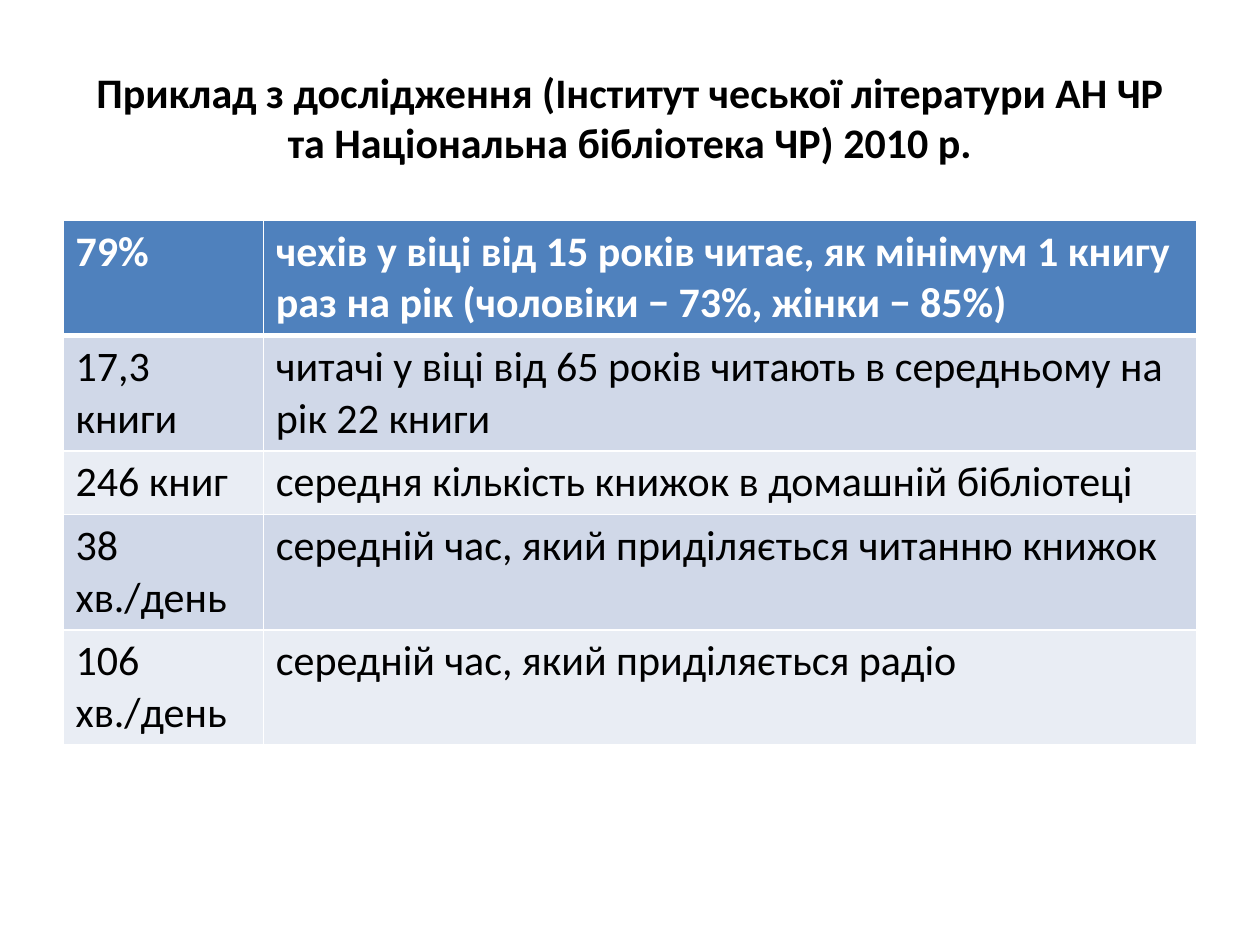
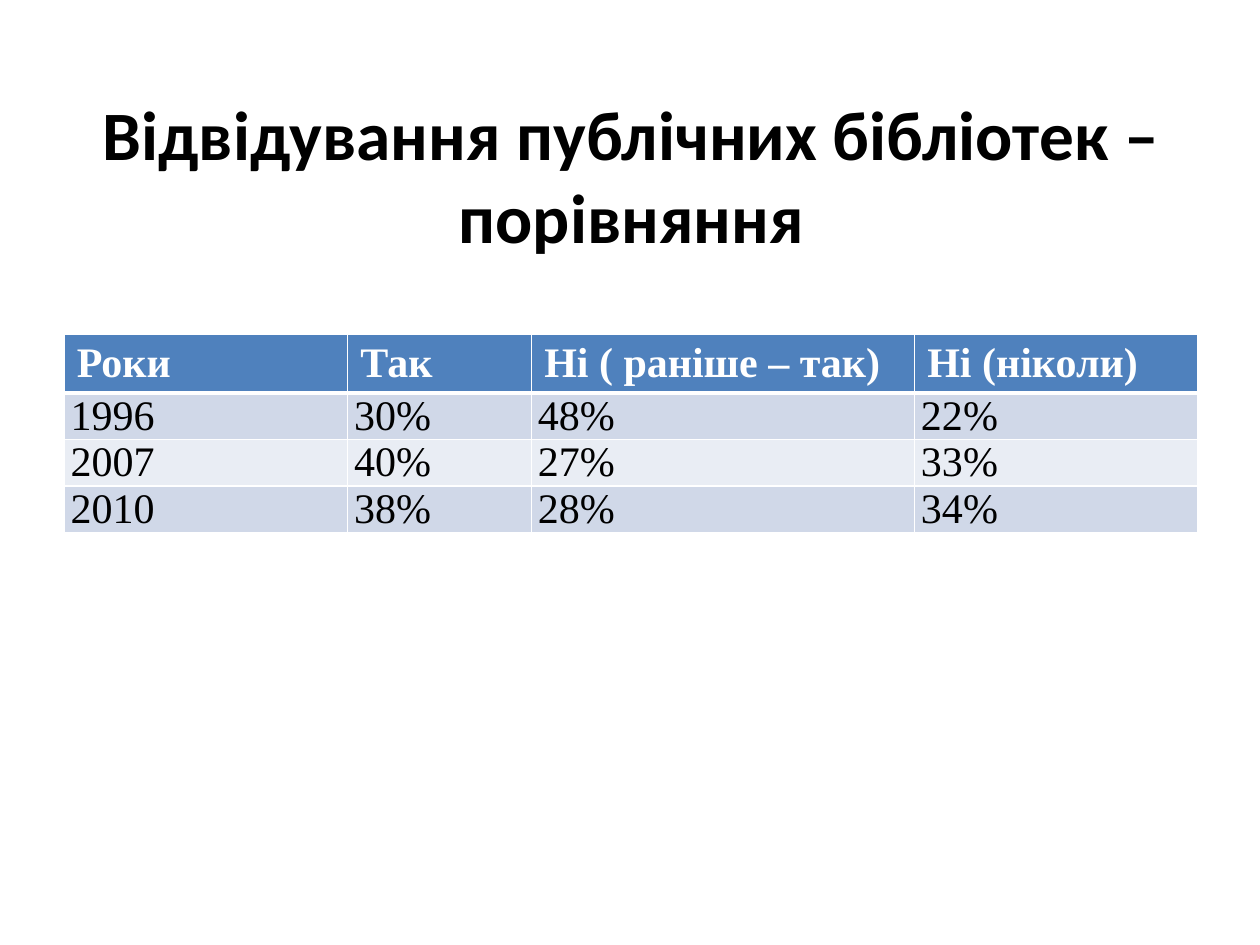
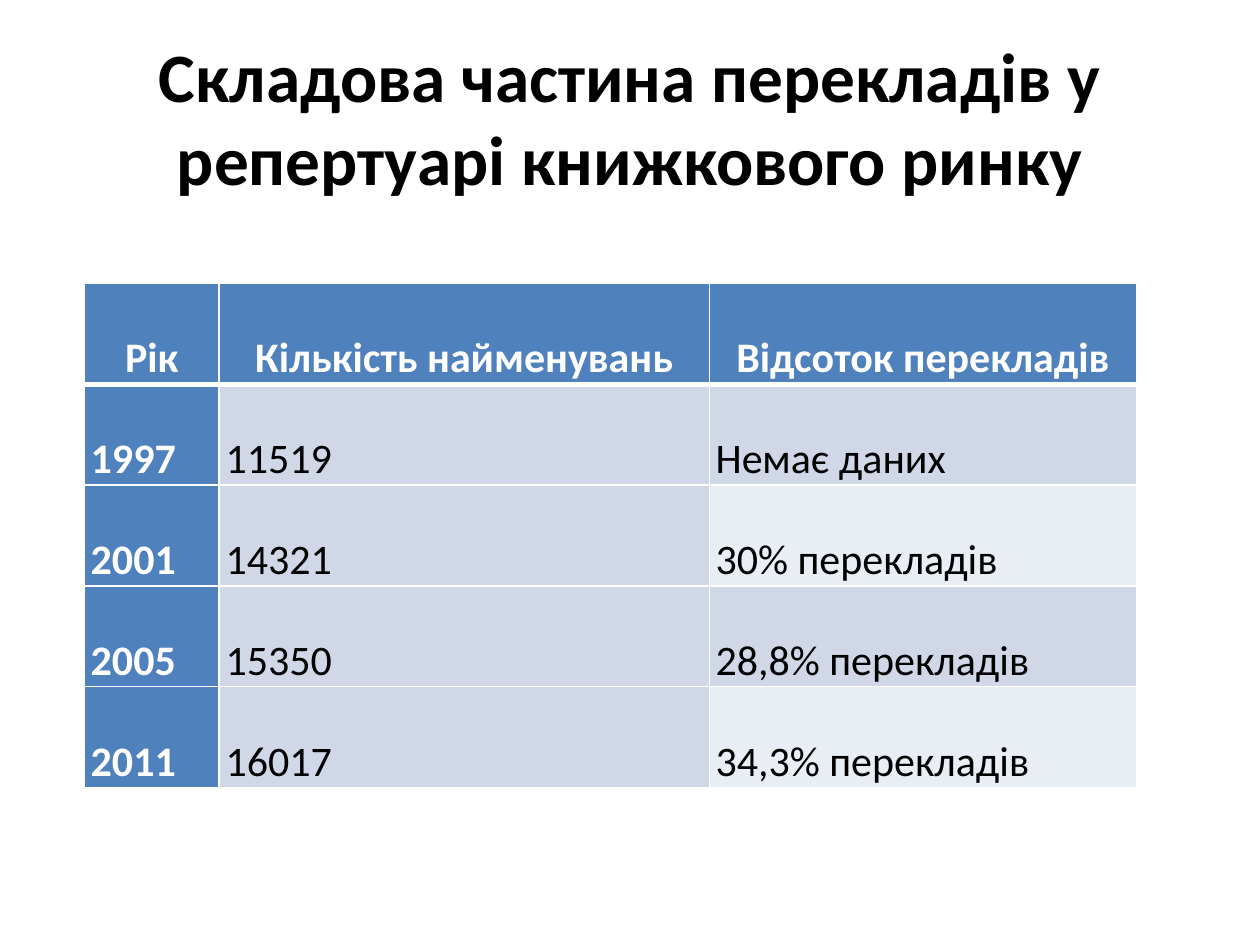
from dataclasses import dataclass

import pptx
import pptx.dml.color
import pptx.enum.text
import pptx.oxml
import pptx.oxml.ns
import pptx.util
from pptx.util import Inches

COLORS = {
    "text": "000000",
    "white": "FFFFFF",
    "header": "4F81BD",
    "band_dark": "D0D8E8",
    "band_light": "E9EDF4",
}
TITLE_FONT = "Calibri"
TABLE_SIZE = 24
TITLE_ONLY_LAYOUT = 5
GRID_WIDTH, HEADER_RULE_WIDTH = 1, 3
CENTER = pptx.enum.text.PP_ALIGN.CENTER
LEFT = pptx.enum.text.PP_ALIGN.LEFT
TOP = pptx.enum.text.MSO_ANCHOR.TOP
BOTTOM = pptx.enum.text.MSO_ANCHOR.BOTTOM


@dataclass
class TableSlide:
    title: str
    title_size: float
    title_position: tuple[float, float]
    table_position: tuple[float, float]
    column_widths: list[float]
    header_height: float
    row_height: float
    rows: list[list[str]]
    font: str = "Calibri"
    tight_header: bool = False
    tight_body: bool = True
    year_column: bool = False


SLIDES = [
    TableSlide(
        title="Приклад з дослідження (Інститут чеської літератури АН ЧР "
        "та Національна бібліотека ЧР) 2010 р.",
        title_size=24,
        title_position=(0.5, 0.3),
        table_position=(0.5, 1.75),
        column_widths=[1.59, 7.41],
        header_height=0.41,
        row_height=0.41,
        rows=[
            ["79%", "чехів у віці від 15 років читає, як мінімум 1 книгу "
             "раз на рік (чоловіки − 73%, жінки − 85%)"],
            ["17,3 книги", "читачі у віці від 65 років читають в середньому на рік 22 книги"],
            ["246 книг", "середня кількість книжок в домашній бібліотеці"],
            ["38 хв./день", "середній час, який приділяється читанню книжок"],
            ["106 хв./день", "середній час, який приділяється радіо"],
        ],
        tight_body=False,
    ),
    TableSlide(
        title="Відвідування публічних бібліотек – порівняння",
        title_size=39.6,
        title_position=(0.51, 0.76),
        table_position=(0.51, 2.65),
        column_widths=[2.25, 1.46, 3.04, 2.25],
        header_height=0.4,
        row_height=0.32,
        rows=[
            ["Роки", "Так", "Ні ( раніше – так)", "Ні (ніколи)"],
            ["1996", "30%", "48%", "22%"],
            ["2007", "40%", "27%", "33%"],
            ["2010", "38%", "28%", "34%"],
        ],
        font="Times New Roman",
    ),
    TableSlide(
        title="Складова частина перекладів у репертуарі книжкового ринку",
        title_size=39.6,
        title_position=(0.5, 0.3),
        table_position=(0.67, 2.25),
        column_widths=[1.07, 3.89, 3.39],
        header_height=0.8,
        row_height=0.8,
        rows=[
            ["Рік", "Кількість найменувань", "Відсоток перекладів"],
            ["1997", "11519", "Немає даних"],
            ["2001", "14321", "30% перекладів"],
            ["2005", "15350", "28,8% перекладів"],
            ["2011", "16017", "34,3% перекладів"],
        ],
        tight_header=True,
        year_column=True,
    ),
]


def rgb(name: str) -> pptx.dml.color.RGBColor:
    return pptx.dml.color.RGBColor.from_string(COLORS[name])


def add_run(paragraph, text: str, font: str, size: float, color: str, bold: bool) -> None:
    run = paragraph.add_run()
    run.text = text
    run.font.name = font
    run.font.size = pptx.util.Pt(size)
    run.font.bold = bold
    run.font.color.rgb = rgb(color)


def add_title(slide, content: TableSlide) -> None:
    title = slide.shapes.title
    title.left, title.top = map(Inches, content.title_position)
    title.width, title.height = Inches(9), Inches(1.25)
    frame = title.text_frame
    frame.word_wrap = True
    frame.auto_size = pptx.enum.text.MSO_AUTO_SIZE.NONE
    frame.vertical_anchor = pptx.enum.text.MSO_ANCHOR.MIDDLE
    paragraph = frame.paragraphs[0]
    paragraph.alignment = CENTER
    add_run(paragraph, content.title, TITLE_FONT, content.title_size, "text", True)


def set_borders(cell, row: int) -> None:
    """Draw the white grid, with a thicker rule under the header row."""
    widths = {
        "lnL": GRID_WIDTH,
        "lnR": GRID_WIDTH,
        "lnT": HEADER_RULE_WIDTH if row == 1 else GRID_WIDTH,
        "lnB": HEADER_RULE_WIDTH if row == 0 else GRID_WIDTH,
    }
    properties = cell._tc.get_or_add_tcPr()
    for tag, width in widths.items():
        properties.append(pptx.oxml.parse_xml(
            f'<a:{tag} {pptx.oxml.ns.nsdecls("a")} w="{pptx.util.Pt(width)}">'
            f'<a:solidFill><a:srgbClr val="{COLORS["white"]}"/></a:solidFill></a:{tag}>'
        ))


def cell_fill(content: TableSlide, row: int, column: int) -> str:
    if row == 0 or (content.year_column and column == 0):
        return "header"
    if row % 2 or (content.year_column and column == 1):
        return "band_dark"
    return "band_light"


def format_cell(cell, content: TableSlide, row: int, column: int) -> None:
    tight = content.tight_body if row else content.tight_header
    cell.vertical_anchor = BOTTOM if tight else TOP
    cell.margin_left = cell.margin_right = Inches(0.05 if tight else 0.1)
    cell.margin_top = cell.margin_bottom = Inches(0 if tight else 0.05)
    set_borders(cell, row)
    fill = cell_fill(content, row, column)
    cell.fill.solid()
    cell.fill.fore_color.rgb = rgb(fill)
    strong = fill == "header"
    paragraph = cell.text_frame.paragraphs[0]
    paragraph.alignment = CENTER if row == 0 and tight else LEFT
    add_run(paragraph, content.rows[row][column], content.font, TABLE_SIZE,
            "white" if strong else "text", strong)


def add_data_table(slide, content: TableSlide) -> None:
    row_heights = [content.header_height] + [content.row_height] * (len(content.rows) - 1)
    left, top = content.table_position
    table = slide.shapes.add_table(
        len(content.rows), len(content.column_widths), Inches(left), Inches(top),
        Inches(sum(content.column_widths)), Inches(sum(row_heights)),
    ).table
    table.first_col = content.year_column
    for column, width in zip(table.columns, content.column_widths):
        column.width = Inches(width)
    for row, height in enumerate(row_heights):
        table.rows[row].height = Inches(height)
        for column in range(len(content.column_widths)):
            format_cell(table.cell(row, column), content, row, column)


def main() -> None:
    presentation = pptx.Presentation()
    presentation.slide_width, presentation.slide_height = Inches(10), Inches(7.5)
    for content in SLIDES:
        slide = presentation.slides.add_slide(presentation.slide_layouts[TITLE_ONLY_LAYOUT])
        add_title(slide, content)
        add_data_table(slide, content)
    presentation.save("out.pptx")


if __name__ == "__main__":
    main()
